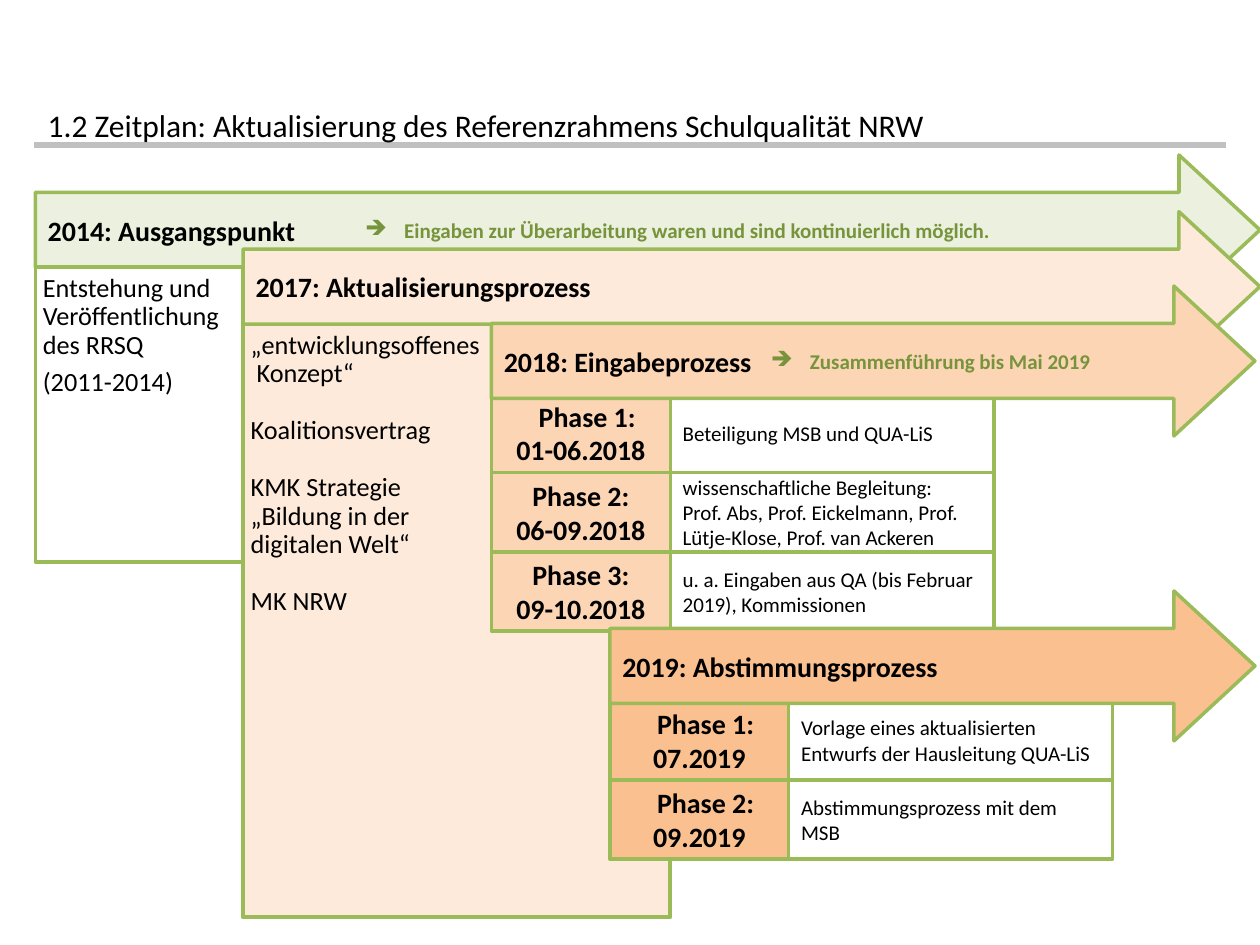
"""Build the timeline slide for the update of the quality framework."""
from lxml import etree
from pptx import Presentation
from pptx.dml.color import RGBColor
from pptx.enum import shapes, text
from pptx.oxml import ns
from pptx.util import Inches, Pt

COLORS = {
    "text": "000000", "note": "77933C", "border": "9BBB59", "rule": "C0C0C0",
    "white": "FFFFFF", "2014": "EBF1DE", "2017": "FDEADA", "2018": "FCD5B5", "2019": "FAC090",
}
FONT = "Calibri"
ARROW_HEIGHT = 1.19
PHASE_WIDTH, DETAIL_WIDTH, ROW_HEIGHT = 1.42, 2.57, 0.63
PHASES_2018 = [
    (["Phase 1:", "01-06.2018"], ["Beteiligung MSB und QUA-LiS"], 0.1),
    (["Phase 2:", "06-09.2018"],
     ["wissenschaftliche Begleitung:",
      "Prof. Abs, Prof. Eickelmann, Prof. Lütje-Klose, Prof. van Ackeren"], 0),
    (["Phase 3:", "09-10.2018"], ["u. a. Eingaben aus QA (bis Februar 2019), Kommissionen"], 0),
]
PHASES_2019 = [
    (["Phase 1:", "07.2019"],
     ["Vorlage eines aktualisierten Entwurfs der Hausleitung QUA-LiS"], 0.1),
    (["Phase 2:", "09.2019"], ["Abstimmungsprozess mit dem MSB"], 0.1),
]
BACKGROUND_2017 = [
    ["„entwicklungsoffenes", " Konzept“"],
    ["Koalitionsvertrag"],
    ["KMK Strategie", "„Bildung in der", "digitalen Welt“"],
    ["MK NRW"],
]


def rgb(name):
    """Return the named colour."""
    return RGBColor.from_string(COLORS[name])


def add_para(frame, words, size, color="text", bold=False, align=text.PP_ALIGN.LEFT):
    """Write one paragraph, using the empty first one if it is still free."""
    first = frame.paragraphs[0]
    para = frame.add_paragraph() if first.runs else first
    para.alignment = align
    span = para.add_run()
    span.text = words
    span.font.name, span.font.size, span.font.bold = FONT, Pt(size), bold
    span.font.color.rgb = rgb(color)
    return para


def add_block(page, left, top, width, height, fill, kind=shapes.MSO_SHAPE.RECTANGLE, weight=2):
    """Add a bordered shape and return it with wrapping, centred-height text."""
    block = page.shapes.add_shape(kind, Inches(left), Inches(top), Inches(width), Inches(height))
    block.shadow.inherit = False
    block.fill.solid()
    block.fill.fore_color.rgb = rgb(fill)
    block.line.color.rgb = rgb("border")
    block.line.width = Pt(weight)
    block.text_frame.word_wrap = True
    block.text_frame.vertical_anchor = text.MSO_ANCHOR.MIDDLE
    return block


def add_arrow(page, left, top, width, year, label):
    """Add the arrow of one year with its heading."""
    arrow = add_block(page, left, top, width, ARROW_HEIGHT, year, shapes.MSO_SHAPE.RIGHT_ARROW)
    arrow.adjustments[0], arrow.adjustments[1] = 0.5, 0.54
    add_para(arrow.text_frame, f"{year}: {label}", 16, bold=True)


def add_text_box(page, left, top, width, height):
    """Add a wrapping text box and return its frame."""
    box = page.shapes.add_textbox(Inches(left), Inches(top), Inches(width), Inches(height))
    box.text_frame.word_wrap = True
    return box.text_frame


def add_note(page, left, top, width, words):
    """Add a green remark with an arrow bullet."""
    para = add_para(add_text_box(page, left, top, width, 0.3), words, 12, "note", True)
    props = para._p.get_or_add_pPr()
    props.set("marL", str(Inches(0.31)))
    props.set("indent", str(-Inches(0.31)))
    etree.SubElement(props, ns.qn("a:buChar")).set("char", "➔")


def add_phases(page, left, top, year, phases):
    """Add rows of a phase label and its detail."""
    for row, (labels, details, shift) in enumerate(phases):
        y = top + row * ROW_HEIGHT
        label_box = add_block(page, left, y, PHASE_WIDTH, ROW_HEIGHT, year)
        for words in labels:
            add_para(label_box.text_frame, words, 16, bold=True, align=text.PP_ALIGN.CENTER)
        if shift:
            heading = label_box.text_frame.paragraphs[0]._p.get_or_add_pPr()
            heading.set("marL", str(Inches(shift)))
        detail_box = add_block(page, left + PHASE_WIDTH, y, DETAIL_WIDTH, ROW_HEIGHT, "white")
        for words in details:
            add_para(detail_box.text_frame, words, 12)


def add_column(page, left, top, width, height, fill, groups, gap, weight=2):
    """Add a tall box whose groups of lines are set apart by a gap in points."""
    frame = add_block(page, left, top, width, height, fill, weight=weight).text_frame
    frame.vertical_anchor = text.MSO_ANCHOR.TOP
    frame.margin_left = frame.margin_right = frame.margin_top = frame.margin_bottom = Inches(0.06)
    for number, group in enumerate(groups):
        for line, words in enumerate(group):
            para = add_para(frame, words, 15)
            para.line_spacing = 0.9
            if number and not line:
                para.space_before = Pt(gap)


def add_title(page, words):
    """Add the heading and the grey rule below it."""
    rule = page.shapes.add_connector(
        shapes.MSO_CONNECTOR.STRAIGHT, Inches(0.27), Inches(1.15), Inches(9.73), Inches(1.15))
    rule.line.color.rgb = rgb("rule")
    rule.line.width = Pt(3)
    etree.SubElement(rule._element.spPr, ns.qn("a:effectLst"))
    frame = add_text_box(page, 0.28, 0.76, 8.11, 0.47)
    frame.vertical_anchor = text.MSO_ANCHOR.MIDDLE
    add_para(frame, words, 18)


def main():
    """Build and save the slide."""
    deck = Presentation()
    deck.slide_width, deck.slide_height = Inches(10), Inches(7.5)
    page = deck.slides.add_slide(deck.slide_layouts[6])
    add_title(page, "1.2 Zeitplan: Aktualisierung des Referenzrahmens Schulqualität NRW")
    add_column(page, 1.93, 2.57, 3.39, 4.71, "2017", BACKGROUND_2017, 16.5, 2.25)
    add_phases(page, 3.9, 3.12, "2018", PHASES_2018)
    add_arrow(page, 0.28, 1.23, 9.72, "2014", "Ausgangspunkt")
    add_note(page, 2.8, 1.68, 5.2,
             "Eingaben zur Überarbeitung waren und sind kontinuierlich möglich.")
    add_column(page, 0.28, 2.12, 1.65, 2.34, "white",
               [["Entstehung und Veröffentlichung des RRSQ"], ["(2011-2014)"]], 5)
    add_arrow(page, 1.93, 1.68, 8.07, "2017", "Aktualisierungsprozess")
    add_arrow(page, 3.9, 2.27, 6.06, "2018", "Eingabeprozess")
    add_note(page, 6.02, 2.72, 2.8, "Zusammenführung bis Mai 2019")
    add_phases(page, 4.84, 5.56, "2019", PHASES_2019)
    add_arrow(page, 4.84, 4.69, 5.12, "2019", "Abstimmungsprozess")
    deck.save("out.pptx")


if __name__ == "__main__":
    main()
